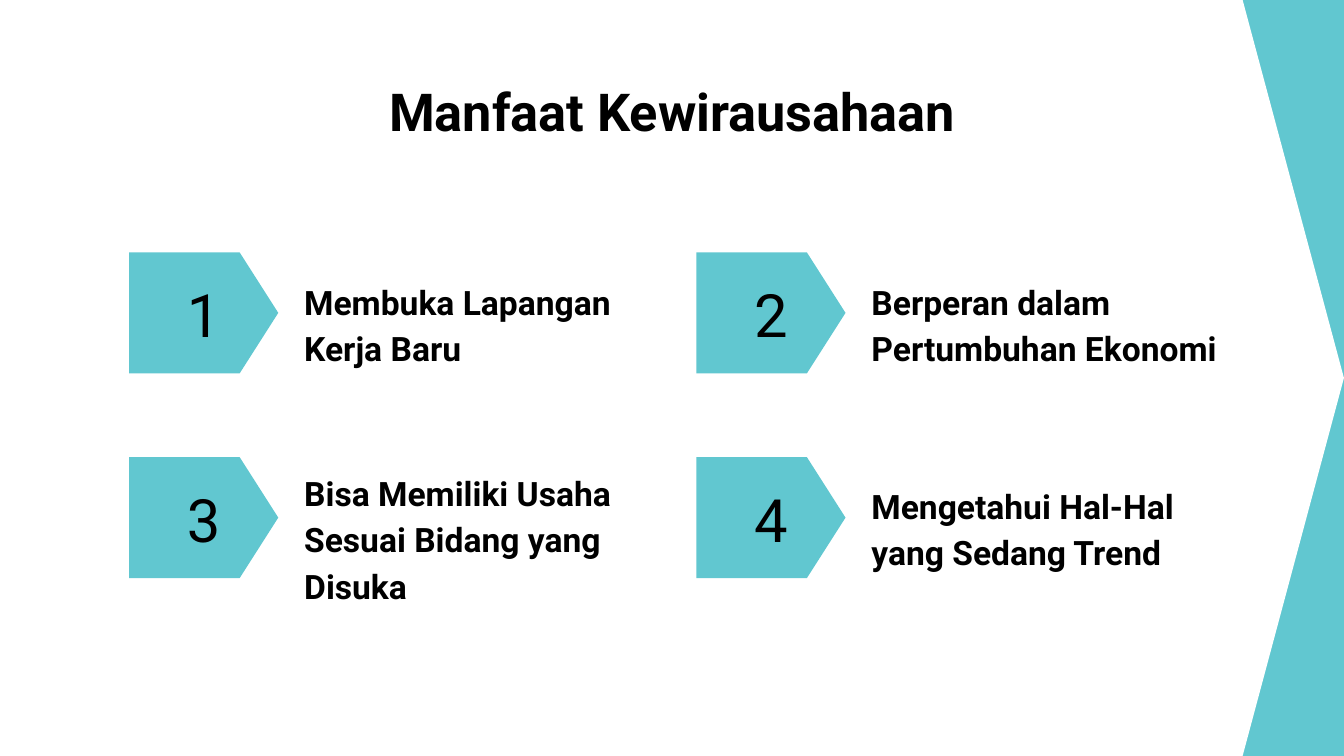
from dataclasses import dataclass

from pptx import Presentation
from pptx.dml.color import RGBColor
from pptx.enum.shapes import MSO_SHAPE
from pptx.enum.text import MSO_ANCHOR, PP_ALIGN
from pptx.util import Cm, Pt


@dataclass(frozen=True)
class Theme:
    accent: RGBColor = RGBColor(0x61, 0xC7, 0xD0)
    paper: RGBColor = RGBColor(0xFF, 0xFF, 0xFF)
    ink: RGBColor = RGBColor(0, 0, 0)
    font: str = "Roboto"
    title: int = 28
    number: int = 32
    caption: int = 18
    inset: float = 0.25


THEME = Theme()
SLIDE_WIDTH, SLIDE_HEIGHT = 25.4, 14.29

BENEFITS = [
    ("Membuka Lapangan Kerja Baru", 6.6, 0.81),
    ("Berperan dalam Pertumbuhan Ekonomi", 7.29, 0.81),
    ("Bisa Memiliki Usaha Sesuai Bidang yang Disuka", 6.6, 0.99),
    ("Mengetahui Hal-Hal yang Sedang Trend", 6.6, 0.79),
]


def add_pentagon(slide, left, top, width, height, point, color):
    pentagon = slide.shapes.add_shape(
        MSO_SHAPE.PENTAGON, Cm(left), Cm(top), Cm(width), Cm(height)
    )
    pentagon.adjustments[0] = point
    pentagon.shadow.inherit = False
    pentagon.fill.solid()
    pentagon.fill.fore_color.rgb = color
    pentagon.line.fill.background()


def add_text(slide, left, top, width, height, text, size, bold=False,
             align=PP_ALIGN.LEFT, anchor=MSO_ANCHOR.MIDDLE):
    box = slide.shapes.add_textbox(Cm(left), Cm(top), Cm(width), Cm(height))
    frame = box.text_frame
    frame.word_wrap = True
    frame.vertical_anchor = anchor
    frame.margin_left = frame.margin_right = Cm(THEME.inset)
    frame.margin_top = frame.margin_bottom = Cm(THEME.inset)
    frame.text = text
    paragraph = frame.paragraphs[0]
    paragraph.alignment = align
    font = paragraph.runs[0].font
    font.name = THEME.font
    font.size = Pt(size)
    font.bold = bold
    font.color.rgb = THEME.ink
    return paragraph


def add_backdrop(slide, left, top, width, height):
    slide.background.fill.solid()
    slide.background.fill.fore_color.rgb = THEME.accent
    add_pentagon(slide, left, top, width, height, 0.134, THEME.paper)


def add_title(slide, left, top, width, height):
    add_text(slide, left, top, width, height, "Manfaat Kewirausahaan",
             THEME.title, True, PP_ALIGN.CENTER, MSO_ANCHOR.TOP)


def add_benefit(slide, left, top, number, caption, caption_width, caption_drop):
    add_pentagon(slide, left, top, 2.82, 2.29, 0.319, THEME.accent)
    add_text(slide, left + 0.61, top + 0.36, 1.6, 1.6, str(number),
             THEME.number, align=PP_ALIGN.CENTER)
    paragraph = add_text(slide, left + 3.06, top + caption_drop, caption_width,
                         1.02, caption, THEME.caption, True)
    paragraph.line_spacing = 1.15
    paragraph.space_after = Pt(16)


def add_benefit_grid(slide, left, top, column_pitch, row_pitch):
    for index, benefit in enumerate(BENEFITS):
        row, column = divmod(index, 2)
        add_benefit(slide, left + column * column_pitch, top + row * row_pitch,
                    index + 1, *benefit)


def main():
    presentation = Presentation()
    presentation.slide_width = Cm(SLIDE_WIDTH)
    presentation.slide_height = Cm(SLIDE_HEIGHT)
    slide = presentation.slides.add_slide(presentation.slide_layouts[6])
    add_backdrop(slide, 0, 0, SLIDE_WIDTH, SLIDE_HEIGHT)
    add_title(slide, 1.98, 1.24, 21.44, 1.6)
    add_benefit_grid(slide, 2.44, 4.77, 10.72, 3.87)
    presentation.save("out.pptx")


if __name__ == "__main__":
    main()
